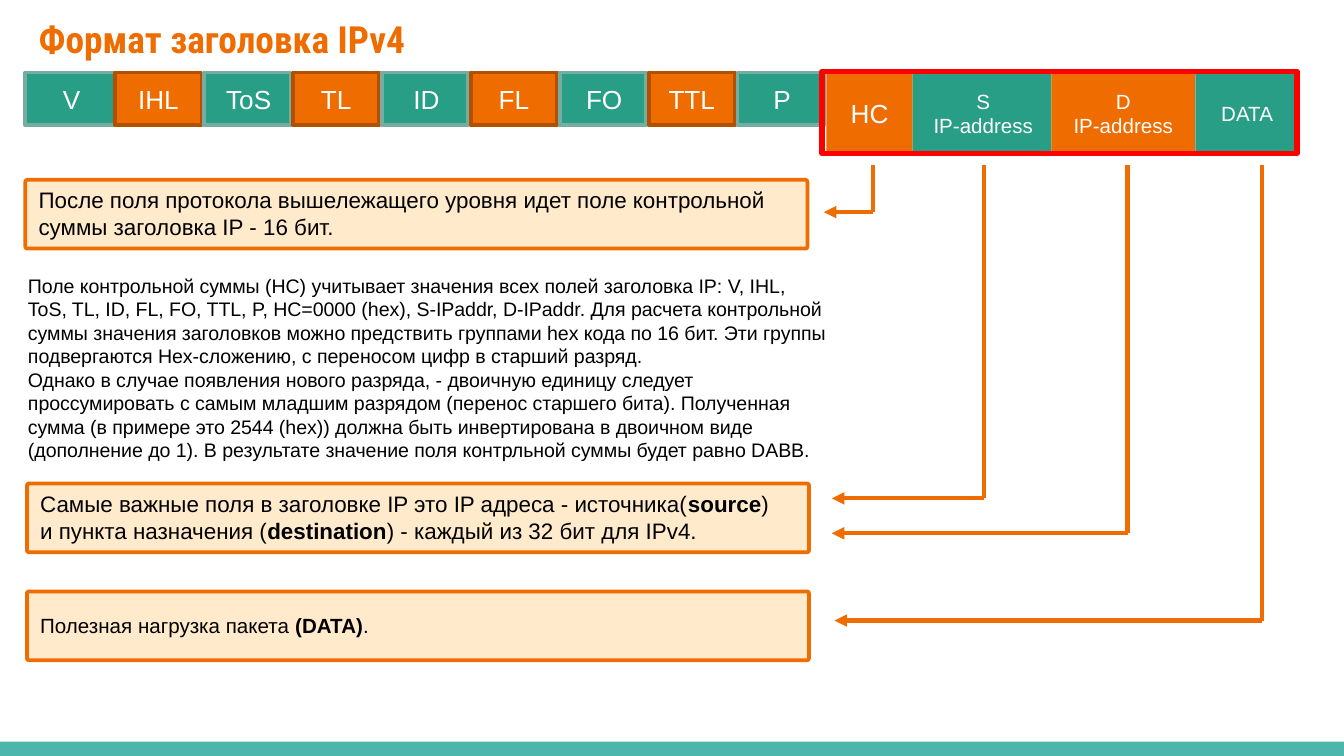
from lxml.etree import SubElement
from pptx import Presentation
from pptx.dml.color import RGBColor
from pptx.enum.shapes import MSO_CONNECTOR, MSO_SHAPE
from pptx.enum.text import MSO_ANCHOR, PP_ALIGN
from pptx.oxml.ns import qn
from pptx.util import Cm, Pt

GREEN, GREEN_EDGE = "279E85", "77ACA1"
ORANGE, ORANGE_EDGE = "EF6C00", "B15000"
CREAM, TEAL, RED, BLACK, WHITE = "FFEACC", "4DB6AC", "FF0000", "000000", "FFFFFF"

TITLE = "Формат заголовка IPv4"
SMALL_FIELDS = ["V", "IHL", "ToS", "TL", "ID", "FL", "FO", "TTL", "P"]
# label, width in cm, font size
LARGE_FIELDS = [
    ("HC", 1.63, 14),
    ("S\nIP-address", 2.62, 11),
    ("D\nIP-address", 2.72, 11),
    ("DATA", 1.91, 11),
]
# box left, box top, text top, text width, font size, runs (every second run is bold)
NOTES = [
    (0.48, 3.4, 3.4, 14.33, 12, [
        "После поля протокола вышележащего уровня идет поле контрольной "
        "суммы заголовка IP - 16 бит."]),
    (0.51, 9.14, 9.14, 14.6, 12, [
        "Самые важные поля в заголовке IP это IP адреса - источника(", "source",
        ") и пункта назначения (", "destination", ") - каждый из 32 бит для IPv4."]),
    (0.51, 11.18, 11.46, 14.33, 11, ["Полезная нагрузка пакета ", "(DATA)", "."]),
]
CHECKSUM = [
    "Поле контрольной суммы (HC) учитывает значения всех полей заголовка IP: "
    "V, IHL, ToS, TL, ID, FL, FO, TTL, P, HC=0000 (hex), S-IPaddr, D-IPaddr. "
    "Для расчета контрольной суммы значения заголовков можно предствить группами "
    "hex кода по 16 бит. Эти группы подвергаются Hex-сложению, с переносом цифр "
    "в старший разряд.",
    "Однако в случае появления нового разряда, - двоичную единицу следует "
    "проссумировать с самым младшим разрядом (перенос старшего бита). Полученная "
    "сумма (в примере это 2544 (hex)) должна быть инвертирована в двоичном виде "
    "(дополнение до 1). В результате значение поля контрльной суммы будет равно DABB.",
]
# column x, row y, arrow tip x in cm
ARROWS = [
    (16.5, 4.01, 15.57),
    (18.59, 9.42, 15.72),
    (21.31, 10.08, 15.72),
    (23.85, 11.73, 15.77),
]
ARROW_TOP = 3.12
ROW_LEFT, ROW_TOP = 0.48, 1.37
FIRST_WIDTH, FIELD_WIDTH, FIELD_PITCH = 1.7, 1.63, 1.68
SMALL_HEIGHT, LARGE_HEIGHT = 1.0, 1.55


def color(value):
    return RGBColor.from_string(value)


def style_font(font, size, value, name="Arial", bold=False):
    font.size, font.name, font.bold = Pt(size), name, bold
    font.color.rgb = color(value)


def add_box(slide, area, fill=None, edge=None, weight=2, kind=MSO_SHAPE.RECTANGLE):
    shape = slide.shapes.add_shape(kind, *map(Cm, area))
    shape.shadow.inherit = False
    if fill:
        shape.fill.solid()
        shape.fill.fore_color.rgb = color(fill)
    else:
        shape.fill.background()
    if edge:
        shape.line.color.rgb = color(edge)
        shape.line.width = Pt(weight)
    else:
        shape.line.fill.background()
    return shape


def add_field(slide, label, area, size, fill, edge=None):
    text_frame = add_box(slide, area, fill, edge).text_frame
    text_frame.vertical_anchor = MSO_ANCHOR.MIDDLE
    text_frame.margin_left = Cm(0.3 if fill == GREEN else 0.25)
    text_frame.text = label
    for paragraph in text_frame.paragraphs:
        paragraph.alignment = PP_ALIGN.CENTER
        style_font(paragraph.runs[0].font, size, WHITE)


def add_text(slide, area, paragraphs, size, value=BLACK, name="Arial", bold=False):
    """Each paragraph is a list of runs; every second run is bold."""
    text_frame = slide.shapes.add_textbox(*map(Cm, area)).text_frame
    text_frame.word_wrap = True
    for index, runs in enumerate(paragraphs):
        paragraph = text_frame.add_paragraph() if index else text_frame.paragraphs[0]
        for position, text in enumerate(runs):
            run = paragraph.add_run()
            run.text = text
            style_font(run.font, size, value, name, bold or position % 2 == 1)
    return text_frame


def add_line(slide, start, end, arrow=False):
    line = slide.shapes.add_connector(MSO_CONNECTOR.STRAIGHT, *map(Cm, start + end))
    line.line.color.rgb = color(ORANGE)
    line.line.width = Pt(2.25)
    properties = line._element.spPr
    if arrow:
        SubElement(properties.find(qn("a:ln")), qn("a:tailEnd"), type="triangle")
    SubElement(properties, qn("a:effectLst"))


def main():
    presentation = Presentation()
    presentation.slide_width, presentation.slide_height = Cm(25.4), Cm(14.29)
    slide = presentation.slides.add_slide(presentation.slide_layouts[6])

    add_box(slide, (0, 14.02, 25.4, 0.27), TEAL)
    title = add_text(slide, (0.48, 0.05, 23.67, 1.45), [[TITLE]], 20, ORANGE,
                     "Roboto Condensed", True)
    title.margin_top = title.margin_bottom = Cm(0.25)

    pitch_left = ROW_LEFT + FIRST_WIDTH
    for index, label in enumerate(SMALL_FIELDS):
        left = pitch_left + (index - 1) * FIELD_PITCH if index else ROW_LEFT
        width = FIELD_WIDTH if index else FIRST_WIDTH
        fill, edge = (ORANGE, ORANGE_EDGE) if index % 2 else (GREEN, GREEN_EDGE)
        add_field(slide, label, (left, ROW_TOP, width, SMALL_HEIGHT), 14, fill, edge)

    left = pitch_left + (len(SMALL_FIELDS) - 1) * FIELD_PITCH
    for index, (label, width, size) in enumerate(LARGE_FIELDS):
        fill = GREEN if index % 2 else ORANGE
        add_field(slide, label, (left, ROW_TOP, width, LARGE_HEIGHT), size, fill)
        left += width

    for box_left, box_top, text_top, text_width, size, runs in NOTES:
        box = add_box(slide, (box_left, box_top, 14.78, 1.3), CREAM, ORANGE,
                      kind=MSO_SHAPE.ROUNDED_RECTANGLE)
        box.adjustments[0] = 0.03
        add_text(slide, (box_left, text_top, text_width, 1.27 if size == 12 else 0.74),
                 [runs], size)

    for column, row, tip in ARROWS:
        add_line(slide, (column, ARROW_TOP), (column, row))
        add_line(slide, (column, row), (tip, row), arrow=True)

    add_text(slide, (0.28, 5.05, 15.6, 3.84), [[text] for text in CHECKSUM], 10.5)
    add_box(slide, (15.54, 1.35, 8.97, LARGE_HEIGHT), edge=RED, weight=3)
    presentation.save("out.pptx")


if __name__ == "__main__":
    main()
